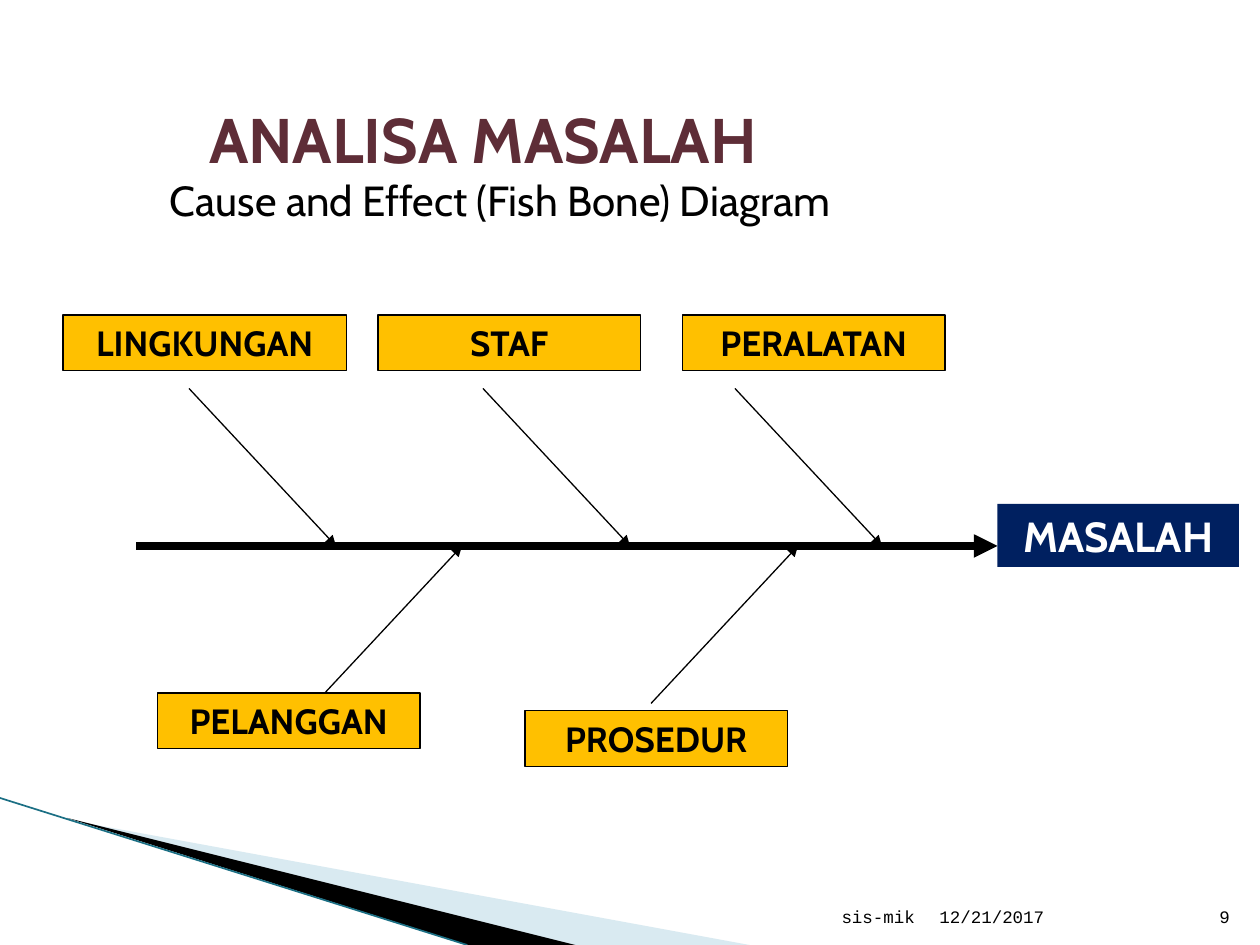
from lxml import etree
from pptx import Presentation
from pptx import util as u
from pptx.dml.color import RGBColor
from pptx.enum import shapes, text
from pptx.oxml.ns import qn

BLACK = RGBColor(0, 0, 0)
WHITE = RGBColor(255, 255, 255)
MAROON = RGBColor(0x5E, 0x2D, 0x37)
AMBER = RGBColor(0xFF, 0xC0, 0x00)
NAVY = RGBColor(0x00, 0x20, 0x60)
PALE_BLUE = RGBColor(0xA0, 0xCB, 0xDC)
TEAL = RGBColor(0x1B, 0x6F, 0x84)
LEFT, CENTER, RIGHT = text.PP_ALIGN.LEFT, text.PP_ALIGN.CENTER, text.PP_ALIGN.RIGHT
TOP, BOTTOM = text.MSO_ANCHOR.TOP, text.MSO_ANCHOR.BOTTOM


def write(shape, words, size=20, color=BLACK, bold=False, font="Cabin",
          align=CENTER, anchor=TOP, wrap=True):
    """Put one formatted paragraph into a shape."""
    frame = shape.text_frame
    frame.word_wrap = wrap
    frame.vertical_anchor = anchor
    paragraph = frame.paragraphs[0]
    paragraph.alignment = align
    run = paragraph.add_run()
    run.text = words
    run.font.name = font
    run.font.size = u.Pt(size)
    run.font.bold = bold
    run.font.color.rgb = color


class FishboneSlide:
    """Draws on a slide divided into 120 columns and 90 rows."""

    def __init__(self, presentation):
        self.cell = presentation.slide_width / 120
        self.slide = presentation.slides.add_slide(presentation.slide_layouts[6])

    def grid(self, *cells):
        return [u.Emu(round(value * self.cell)) for value in cells]

    def label(self, box, words, **style):
        write(self.slide.shapes.add_textbox(*self.grid(*box)), words, **style)

    def box(self, area, words, fill, outline=None, **style):
        shape = self.slide.shapes.add_shape(shapes.MSO_SHAPE.RECTANGLE, *self.grid(*area))
        self.paint(shape, fill)
        if outline is not None:
            shape.line.color.rgb = outline
            shape.line.width = u.Pt(0.75)
        write(shape, words, bold=True, **style)

    def paint(self, shape, color):
        shape.shadow.inherit = False
        shape.fill.solid()
        shape.fill.fore_color.rgb = color
        shape.line.fill.background()

    def wedge(self, points, color, opacity=100):
        start, *others = [self.grid(*point) for point in points]
        builder = self.slide.shapes.build_freeform(*start)
        builder.add_line_segments(others, close=True)
        shape = builder.convert_to_shape()
        self.paint(shape, color)
        if opacity < 100:
            solid = shape.fill.fore_color._xFill.find(qn("a:srgbClr"))
            etree.SubElement(solid, qn("a:alpha"), val=str(opacity * 1000))

    def line(self, start, end, color=BLACK, width=0.75, arrow=True):
        connector = self.slide.shapes.add_connector(
            shapes.MSO_CONNECTOR.STRAIGHT, *self.grid(*start, *end))
        connector.line.color.rgb = color
        connector.line.width = u.Pt(width)
        if arrow:
            etree.SubElement(connector.line._get_or_add_ln(), qn("a:tailEnd"), type="triangle")
        etree.SubElement(connector._element.spPr, qn("a:effectLst"))


def main():
    presentation = Presentation()
    presentation.slide_width, presentation.slide_height = u.Inches(10), u.Inches(7.5)
    slide = FishboneSlide(presentation)

    slide.wedge([(6.6, 78.1), (71.4, 90), (54.7, 90)], PALE_BLUE, opacity=40)
    slide.wedge([(6.4, 77.9), (54.8, 90), (44.6, 90)], BLACK)
    slide.line((0, 76), (44.5, 90), color=TEAL, width=0.95, arrow=False)

    slide.label((17, 9, 58, 5.4), "ANALISA MASALAH", size=36, color=MAROON,
                bold=True, wrap=False)
    slide.label((15, 16, 72, 6), "Cause and Effect (Fish Bone) Diagram", size=24, align=LEFT)

    spine = 52
    slide.line((13, spine), (95, spine), width=4.5)
    slide.box((95, 48, 23, 6), "MASALAH", NAVY, size=24, color=WHITE)
    for column, row, reach in [(30, 67, 14), (62, 67, 14),
                               (18, 37, 14), (46, 37, 14), (70, 37, 14)]:
        slide.line((column, row), (column + reach, spine))

    for column, row, width, cause in [(6, 30, 27, "LINGKUNGAN"), (36, 30, 25, "STAF"),
                                      (65, 30, 25, "PERALATAN"), (15, 66, 25, "PELANGGAN"),
                                      (50, 67.7, 25, "PROSEDUR")]:
        slide.box((column, row, width, 5.3), cause, AMBER, outline=BLACK)

    for column, width, words, align in [(88.3, 25.2, "12/21/2017", LEFT),
                                        (57.5, 30.8, "sis-mik", RIGHT),
                                        (113.5, 4.8, "9", RIGHT)]:
        slide.label((column, 84.1, width, 4.8), words, size=10, font="Courier New",
                    align=align, anchor=BOTTOM)

    presentation.save("out.pptx")


if __name__ == "__main__":
    main()
